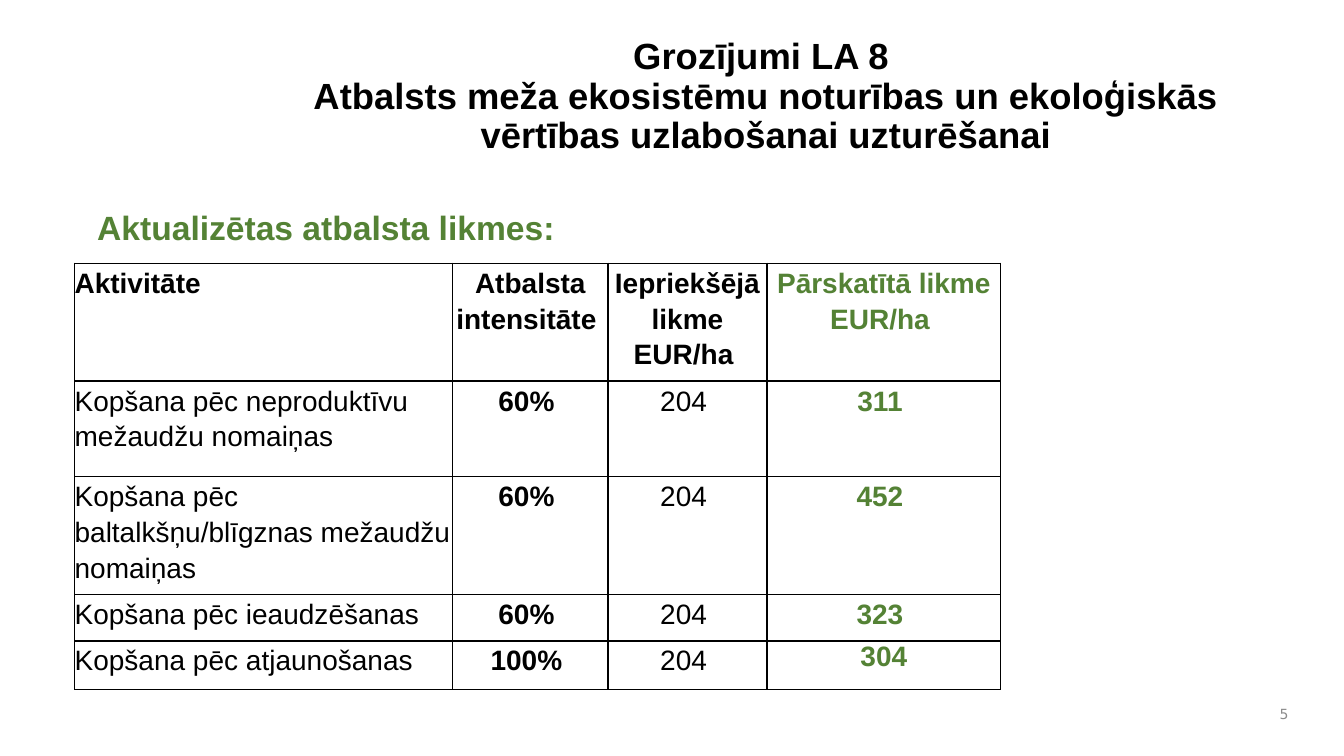
from lxml import etree
from pptx import Presentation
from pptx.dml.color import RGBColor
from pptx.enum import text
from pptx.oxml import ns
from pptx.util import Cm, Pt

BLACK, GREEN, GREY = "000000", "548235", "8C8C8C"
LEFT, CENTER, RIGHT = text.PP_ALIGN.LEFT, text.PP_ALIGN.CENTER, text.PP_ALIGN.RIGHT
HARD_SPACE = " "

COLUMN_WIDTHS = [9.53, 3.91, 4.01, 5.89]
ROW_HEIGHTS = [2.97, 2.41, 2.97, 1.17, 1.22]
RATES = [
    ["Aktivitāte", "Atbalsta intensitāte", "Iepriekšējā likme EUR/ha", "Pārskatītā likme EUR/ha"],
    ["Kopšana pēc neproduktīvu mežaudžu nomaiņas", "60%", "204", "311"],
    ["Kopšana pēc baltalkšņu/blīgznas mežaudžu nomaiņas", "60%", "204", "452"],
    ["Kopšana pēc ieaudzēšanas", "60%", "204", "323"],
    ["Kopšana pēc atjaunošanas", "100%", "204", "304"],
]


def rgb(color):
    return RGBColor.from_string(color)


def write(frame, words, size=20, color=BLACK, bold=False, align=LEFT,
          font="Arial", spacing=1.0, after=0):
    frame.word_wrap = True
    paragraph = frame.paragraphs[0]
    paragraph.text = words
    paragraph.alignment = align
    paragraph.line_spacing = spacing
    paragraph.space_before = Pt(0)
    paragraph.space_after = Pt(after)
    for run in paragraph.runs:
        run.font.name = font
        run.font.size = Pt(size)
        run.font.bold = bold
        run.font.color.rgb = rgb(color)


def add_title(slide, words):
    title = slide.shapes.title
    title.left, title.top, title.width, title.height = Cm(6.43), Cm(0.84), Cm(25.76), Cm(3.66)
    frame = title.text_frame
    frame.auto_size = text.MSO_AUTO_SIZE.NONE
    frame.vertical_anchor = text.MSO_ANCHOR.TOP
    write(frame, words, size=26, bold=True, align=CENTER, spacing=0.9)


def add_label(slide, words, left, top, width, height, **style):
    label = slide.shapes.add_textbox(Cm(left), Cm(top), Cm(width), Cm(height))
    label.text_frame.vertical_anchor = text.MSO_ANCHOR.MIDDLE
    write(label.text_frame, words, **style)


def draw_borders(cell, color=BLACK, width=1):
    properties = cell._tc.get_or_add_tcPr()
    for position, side in enumerate(("a:lnL", "a:lnR", "a:lnT", "a:lnB")):
        line = etree.Element(ns.qn(side), w=str(Pt(width)))
        fill = etree.SubElement(line, ns.qn("a:solidFill"))
        etree.SubElement(fill, ns.qn("a:srgbClr"), val=color)
        properties.insert(position, line)


def fill_cell(cell, words, row, column):
    cell.margin_left = cell.margin_right = cell.margin_top = cell.margin_bottom = 0
    cell.fill.background()
    draw_borders(cell)
    is_last = (row, column) == (len(RATES) - 1, len(COLUMN_WIDTHS) - 1)
    write(
        cell.text_frame,
        words if is_last else words + HARD_SPACE,
        color=GREEN if column == 3 else BLACK,
        bold=row == 0 or column in (1, 3),
        align=CENTER if column else LEFT,
        spacing=1.0 if is_last else 1.15,
        after=0 if is_last else 10,
    )


def add_rates_table(slide):
    table = slide.shapes.add_table(
        len(RATES), len(COLUMN_WIDTHS), Cm(1.88), Cm(6.63),
        Cm(sum(COLUMN_WIDTHS)), Cm(sum(ROW_HEIGHTS))).table
    table.first_row = table.horz_banding = False
    for column, width in zip(table.columns, COLUMN_WIDTHS):
        column.width = Cm(width)
    for row, height in zip(table.rows, ROW_HEIGHTS):
        row.height = Cm(height)
    for i, activity in enumerate(RATES):
        for j, words in enumerate(activity):
            fill_cell(table.cell(i, j), words, i, j)


def main():
    deck = Presentation()
    deck.slide_width, deck.slide_height = Cm(33.87), Cm(19.05)
    slide = deck.slides.add_slide(deck.slide_layouts.get_by_name("Title Only"))
    add_title(slide, "Grozījumi LA 8 \nAtbalsts meža ekosistēmu noturības un ekoloģiskās "
                     "vērtības uzlabošanai uzturēšanai")
    add_label(slide, "Aktualizētas atbalsta likmes:", 2.2, 5.1, 30.3, 1.25,
              size=24, color=GREEN, bold=True)
    add_rates_table(slide)
    add_label(slide, "5", 31.6, 17.58, 1.12, 0.84,
              size=10, color=GREY, align=RIGHT, font="DejaVu Sans")
    deck.save("out.pptx")


if __name__ == "__main__":
    main()
